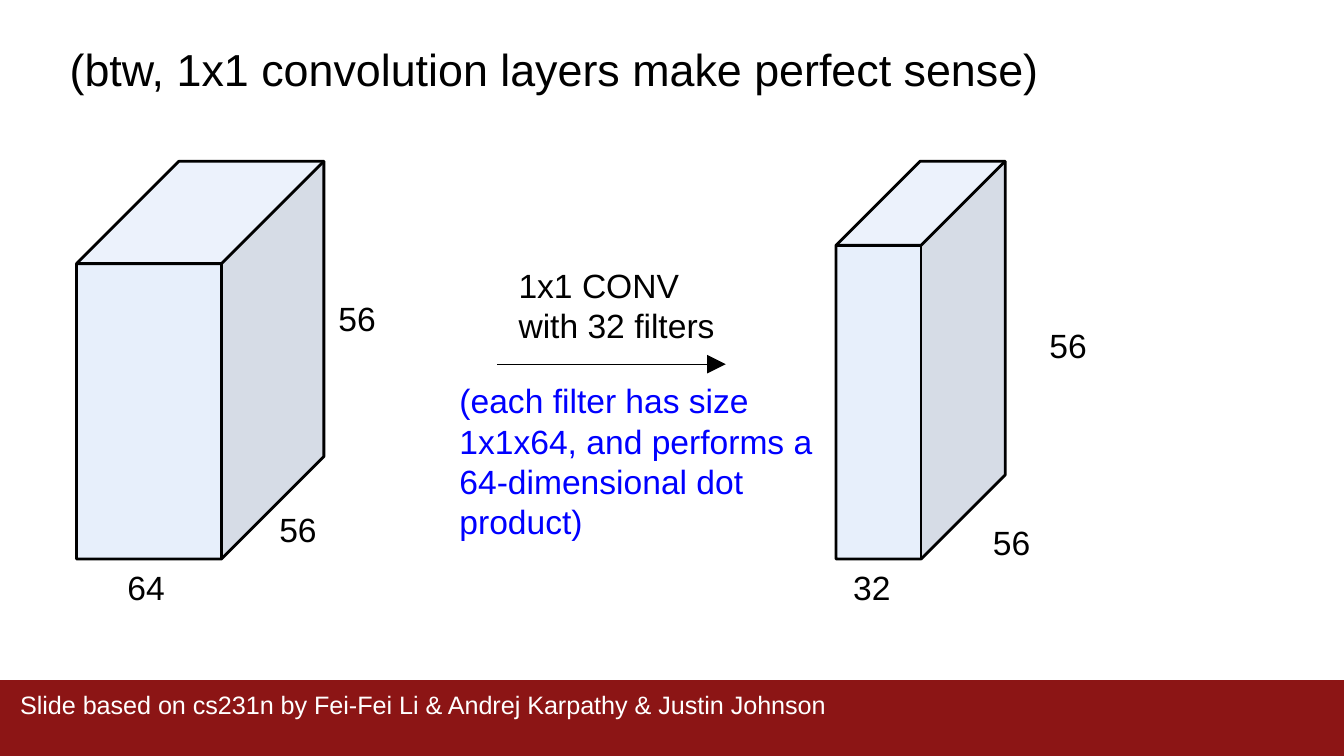
from dataclasses import dataclass

from lxml import etree
from pptx import Presentation
from pptx import util as u
from pptx.dml.color import RGBColor
from pptx.enum import shapes, text
from pptx.oxml.ns import qn

# The slide is a grid of square cells
COLUMNS, ROWS = 100, 56.25
CELL = u.Inches(0.1)


@dataclass(frozen=True)
class Theme:
    font: str = "Arial"
    ink: str = "000000"
    note: str = "0000FF"
    volume: str = "C9DAF8"
    volume_opacity: int = 43
    footer: str = "8C1515"
    footer_ink: str = "FFFFFF"
    title_size: float = 24
    body_size: float = 18
    footer_size: float = 13.5
    outline: float = 1.5
    arrow: float = 0.75


THEME = Theme()


def cells(*values):
    return [round(value * CELL) for value in values]


def add_text(slide, box, lines, size=THEME.body_size, color=THEME.ink, inset=1):
    """Place one paragraph per line in a top-aligned text box."""
    frame = slide.shapes.add_textbox(*cells(*box)).text_frame
    frame.word_wrap = True
    frame.vertical_anchor = text.MSO_ANCHOR.TOP
    frame.margin_left, frame.margin_top, frame.margin_right, frame.margin_bottom = (
        cells(*[inset] * 4))
    for index, line in enumerate(lines):
        paragraph = frame.add_paragraph() if index else frame.paragraphs[0]
        run = paragraph.add_run()
        run.text = line
        run.font.name = THEME.font
        run.font.size = u.Pt(size)
        run.font.color.rgb = RGBColor.from_string(color)


def add_block(slide, kind, box, fill):
    shape = slide.shapes.add_shape(kind, *cells(*box))
    shape.shadow.inherit = False
    shape.fill.solid()
    shape.fill.fore_color.rgb = RGBColor.from_string(fill)
    shape.line.fill.background()
    return shape


def add_footer(slide, box):
    left, top, width, height = box
    add_block(slide, shapes.MSO_SHAPE.RECTANGLE, box, THEME.footer)
    add_text(slide, (left + 0.8, top, width - 2, height),
             ["Slide based on cs231n by Fei-Fei Li & Andrej Karpathy & Justin Johnson"],
             THEME.footer_size, THEME.footer_ink, inset=0.7)


def add_volume(slide, box, depth, labels):
    """Draw a see-through cuboid; labels are (text, right, down) from its corner."""
    left, top = box[:2]
    cube = add_block(slide, shapes.MSO_SHAPE.CUBE, box, THEME.volume)
    cube.adjustments[0] = depth
    color = cube.fill._xPr.find(qn("a:solidFill"))[0]
    etree.SubElement(color, qn("a:alpha"), val=str(THEME.volume_opacity * 1000))
    cube.line.color.rgb = RGBColor.from_string(THEME.ink)
    cube.line.width = u.Pt(THEME.outline)
    for label, right, down in labels:
        add_text(slide, (left + right, top + down, 5.3, 3.8), [label])


def add_step(slide, box):
    """Draw the arrow between the volumes, with its name above and a note below."""
    left, top, width, height = box
    middle = top + 8.4
    arrow = slide.shapes.add_connector(
        shapes.MSO_CONNECTOR.STRAIGHT,
        *cells(left + 3.8, middle, left + 20.8, middle))
    arrow.line.color.rgb = RGBColor.from_string(THEME.ink)
    arrow.line.width = u.Pt(THEME.arrow)
    etree.SubElement(arrow.line._get_or_add_ln(), qn("a:tailEnd"),
                     type="triangle", w="lg", len="lg")
    etree.SubElement(arrow._element.spPr, qn("a:effectLst"))

    add_text(slide, (left + 4.4, top, 19.5, 4.7), ["1x1 CONV", "with 32 filters"])
    add_text(slide, (left, middle + 0.2, width, height - 8.6),
             ["(each filter has size 1x1x64, and performs a 64-dimensional dot product)"],
             color=THEME.note)


def main():
    presentation = Presentation()
    presentation.slide_width, presentation.slide_height = cells(COLUMNS, ROWS)
    slide = presentation.slides.add_slide(presentation.slide_layouts[6])

    # Footer band and title
    add_footer(slide, (0, 50.6, COLUMNS, 5.8))
    add_text(slide, (4.2, 2.1, 93, 10.4),
             ["(btw, 1x1 convolution layers make perfect sense)"], THEME.title_size)

    # Input volume, convolution, output volume
    add_volume(slide, (5.7, 12, 18.4, 29.6), 0.414,
               [("64", 2.8, 29.2), ("56", 14.1, 24.9), ("56", 18.5, 9.2)])
    add_step(slide, (33.2, 18.7, 31.2, 15.3))
    add_volume(slide, (62.2, 12, 12.6, 29.6), 0.497,
               [("32", 0.3, 29.2), ("56", 10.7, 25.8), ("56", 14.9, 11.2)])

    presentation.save("out.pptx")


if __name__ == "__main__":
    main()
